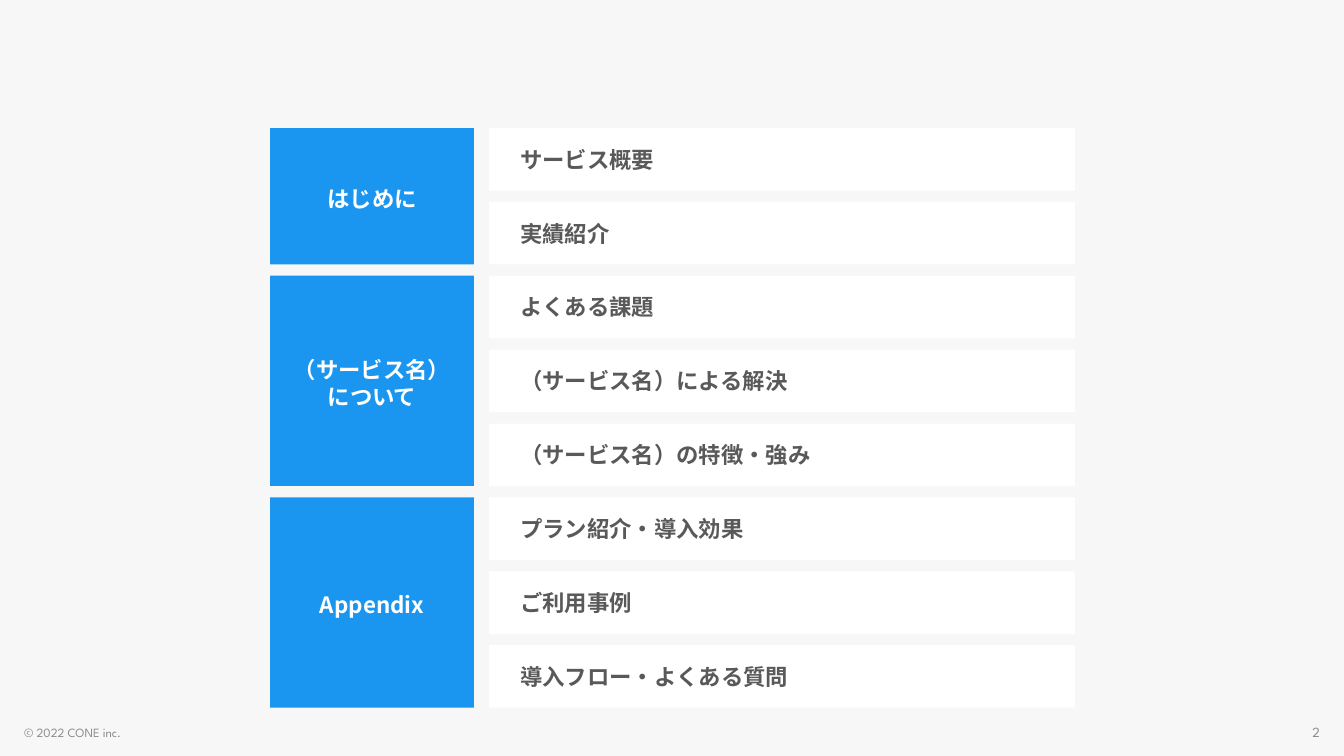
import pptx
import pptx.dml.color
import pptx.enum.shapes
import pptx.enum.text
import pptx.oxml.ns
import pptx.util
from lxml import etree

ALIGN = pptx.enum.text.PP_ALIGN
MIDDLE = pptx.enum.text.MSO_ANCHOR.MIDDLE
JAPANESE_FONT = "Noto Sans CJK JP"
FOOTER_FONT = "League Spartan"

# Agenda grid, in inches
TOP = 1.27
ROW_HEIGHT = 0.62
ROW_PITCH = 0.733
SECTION_COLUMN = (2.68, 2.02)
TOPIC_COLUMN = (4.85, 5.81)

AGENDA = [
    ("はじめに", ["サービス概要", "実績紹介"]),
    ("（サービス名）\vについて",
     ["よくある課題", "（サービス名）による解決", "（サービス名）の特徴・強み"]),
    ("Appendix",
     ["プラン紹介・導入効果", "ご利用事例", "導入フロー・よくある質問"]),
]


def color(hex_code):
    return pptx.dml.color.RGBColor.from_string(hex_code)


def inches(*lengths):
    return [pptx.util.Inches(length) for length in lengths]


def write_text(shape, text, font_name, size, hex_code, bold, align, margins):
    """Fill a shape with one paragraph; margins run left, top, right, bottom."""
    left, top, right, bottom = inches(*margins)
    frame_format = {
        "word_wrap": True, "vertical_anchor": MIDDLE,
        "margin_left": left, "margin_top": top,
        "margin_right": right, "margin_bottom": bottom,
    }
    for name, value in frame_format.items():
        setattr(shape.text_frame, name, value)
    paragraph = shape.text_frame.paragraphs[0]
    paragraph.text = text
    paragraph.alignment = align
    font_format = {"name": font_name, "size": pptx.util.Pt(size), "bold": bold}
    for run in paragraph.runs:
        for name, value in font_format.items():
            setattr(run.font, name, value)
        run.font.color.rgb = color(hex_code)
        # Japanese characters take the East Asian typeface
        properties = run._r.get_or_add_rPr()
        etree.SubElement(properties, pptx.oxml.ns.qn("a:ea"), typeface=font_name)


def add_block(slide, column, row, row_count, fill):
    """Add a square-cornered block that spans row_count rows of the grid."""
    left, width = column
    height = (row_count - 1) * ROW_PITCH + ROW_HEIGHT
    block = slide.shapes.add_shape(
        pptx.enum.shapes.MSO_SHAPE.ROUNDED_RECTANGLE,
        *inches(left, TOP + row * ROW_PITCH, width, height))
    block.adjustments[0] = 0
    block.shadow.inherit = False
    block.fill.solid()
    block.fill.fore_color.rgb = color(fill)
    block.line.fill.background()
    return block


def add_topic(slide, text, row):
    block = add_block(slide, TOPIC_COLUMN, row, 1, "FFFFFF")
    write_text(block, text, JAPANESE_FONT, 16, "595959", True,
               ALIGN.LEFT, (0.31, 0.05, 0.1, 0.05))


def add_section(slide, text, row, row_count):
    block = add_block(slide, SECTION_COLUMN, row, row_count, "1A96F0")
    write_text(block, text, JAPANESE_FONT, 16, "FFFFFF", True,
               ALIGN.CENTER, (0.1, 0.08, 0.1, 0.04))


def add_footer(slide, text, left, size, align):
    box = slide.shapes.add_textbox(*inches(left, 7.13, 3, 0.27))
    write_text(box, text, FOOTER_FONT, size, "8C8C8C", False,
               align, (0.1, 0.05, 0.1, 0.05))


def main():
    presentation = pptx.Presentation()
    presentation.slide_width, presentation.slide_height = inches(13.33, 7.5)
    slide = presentation.slides.add_slide(presentation.slide_layouts[6])
    slide.background.fill.solid()
    slide.background.fill.fore_color.rgb = color("F7F7F7")

    add_footer(slide, "© 2022 CONE inc.", 0.14, 9, ALIGN.LEFT)
    add_footer(slide, "2", 10.19, 10, ALIGN.RIGHT)

    first_row = 0
    for section, topics in AGENDA:
        for row, topic in enumerate(topics, first_row):
            add_topic(slide, topic, row)
        add_section(slide, section, first_row, len(topics))
        first_row += len(topics)

    presentation.save("out.pptx")


if __name__ == "__main__":
    main()
